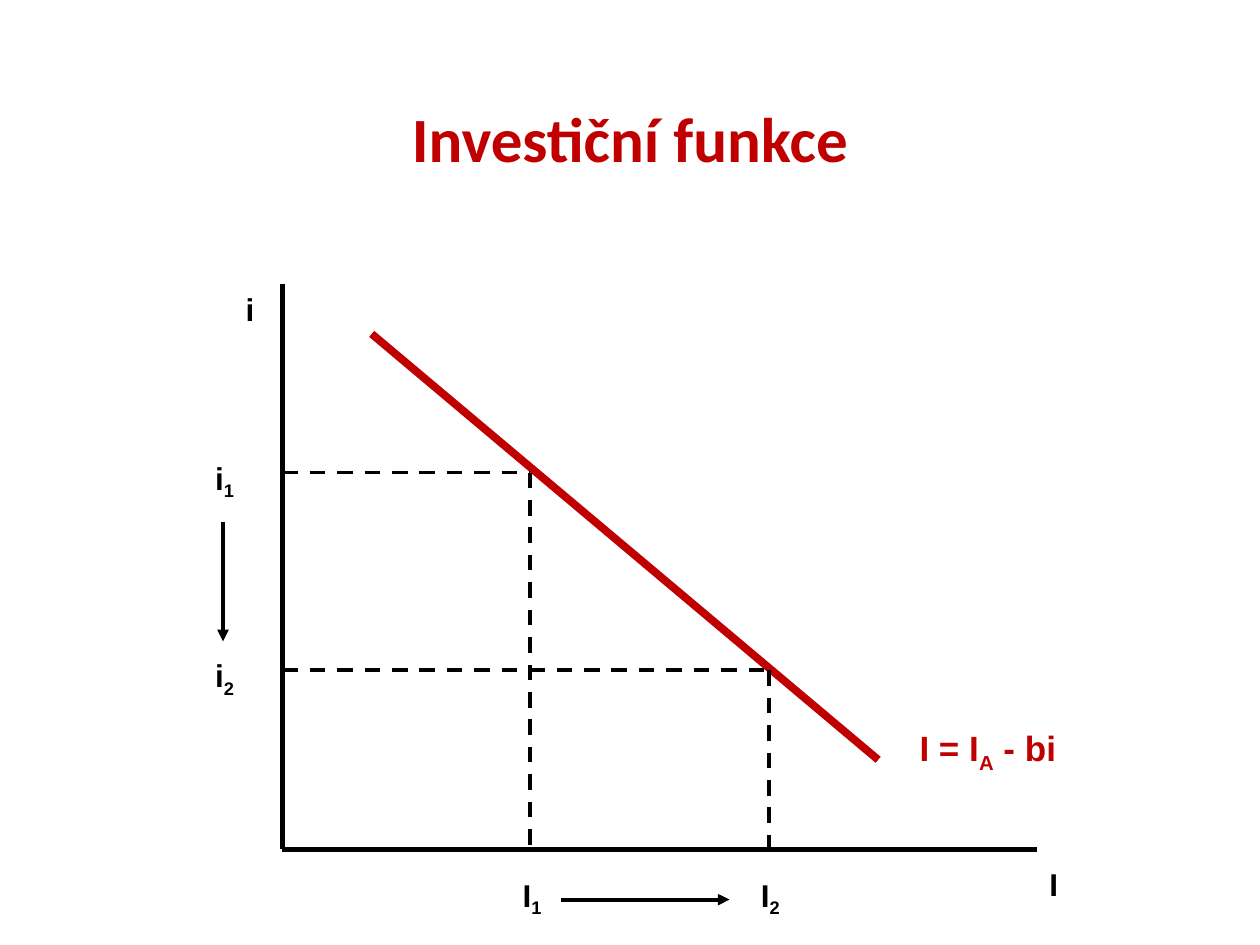
from dataclasses import dataclass

from lxml import etree
from pptx import Presentation
from pptx import util as u
from pptx.dml.color import RGBColor
from pptx.enum import dml, shapes, text
from pptx.oxml import ns


@dataclass(frozen=True)
class Theme:
    ink: RGBColor = RGBColor(0x00, 0x00, 0x00)
    accent: RGBColor = RGBColor(0xC0, 0x00, 0x00)
    title_font: str = "Calibri"
    label_font: str = "Arial"
    title_size: int = 36
    formula_size: int = 20
    label_size: int = 18
    axis_width: float = 3
    curve_width: float = 4.5
    guide_width: float = 2.25


THEME = Theme()


def add_run(paragraph, words, font_name, size, color, subscript=False):
    run = paragraph.add_run()
    run.text = words
    run.font.name = font_name
    run.font.size = u.Pt(size)
    run.font.bold = True
    run.font.color.rgb = color
    if subscript:
        run.font._element.set("baseline", "-25000")


def add_label(slide, left, top, width, height, base, subscript="", rest="",
              size=THEME.label_size, color=THEME.ink):
    """Text with an optional subscript and a continuation after it."""
    box = slide.shapes.add_textbox(*map(u.Inches, (left, top, width, height)))
    box.text_frame.word_wrap = True
    paragraph = box.text_frame.paragraphs[0]
    for words, lowered in ((base, False), (subscript, True), (rest, False)):
        if words:
            add_run(paragraph, words, THEME.label_font, size, color, lowered)


def add_line(slide, start, end, width, color=THEME.ink, dashed=False, arrow=False):
    connector = slide.shapes.add_connector(
        shapes.MSO_CONNECTOR.STRAIGHT, *map(u.Inches, (*start, *end)))
    connector.line.color.rgb = color
    connector.line.width = u.Pt(width)
    if dashed:
        connector.line.dash_style = dml.MSO_LINE.DASH
    if arrow:
        etree.SubElement(connector.line._get_or_add_ln(), ns.qn("a:tailEnd"),
                         type="triangle")
    etree.SubElement(connector._element.spPr, ns.qn("a:effectLst"))


def place_title(slide, left, top, width, height):
    title = slide.shapes.title
    title.left, title.top, title.width, title.height = map(
        u.Inches, (left, top, width, height))
    title.text_frame.vertical_anchor = text.MSO_ANCHOR.MIDDLE
    paragraph = title.text_frame.paragraphs[0]
    paragraph.alignment = text.PP_ALIGN.CENTER
    paragraph.line_spacing = 0.9
    add_run(paragraph, "Investiční funkce", THEME.title_font,
            THEME.title_size, THEME.accent)


def draw_investment_graph(slide, left, top, width, height):
    """Draw the graph; the box spans the two axes."""
    right, bottom = left + width, top + height

    # Axes and their names
    add_line(slide, (left, top), (left, bottom), THEME.axis_width)
    add_line(slide, (left, bottom), (right, bottom), THEME.axis_width)
    add_label(slide, right, bottom + 0.08, 0.87, 0.4, "I")
    add_label(slide, left - 0.39, top, 0.31, 0.4, "i")

    # Investment curve and its formula
    add_line(slide, (left + 0.71, top + 0.4), (left + 4.73, top + 3.78),
             THEME.curve_width, THEME.accent)
    add_label(slide, left + 4.96, top + 3.47, 1.57, 0.43, "I = I", "A", " - bi",
              THEME.formula_size, THEME.accent)

    # Dashed guides from both axes to the points on the curve
    points = [(left + 1.97, top + 1.5), (left + 3.86, top + 3.07)]
    for number, (x, y) in enumerate(points, 1):
        add_line(slide, (left, y), (x, y), THEME.guide_width, dashed=True)
        add_line(slide, (x, y), (x, bottom), THEME.guide_width, dashed=True)
        add_label(slide, left - 0.63, y - 0.16, 0.39, 0.4, "i", str(number))
        add_label(slide, x - 0.16, bottom + 0.16, 0.39, 0.4, "I", str(number))

    # Arrows showing the move from the first point to the second
    (first_x, first_y), (second_x, second_y) = points
    arrow_x, arrow_y = left - 0.47, bottom + 0.4
    add_line(slide, (arrow_x, first_y + 0.39), (arrow_x, second_y - 0.23),
             THEME.guide_width, arrow=True)
    add_line(slide, (first_x + 0.24, arrow_y), (second_x - 0.31, arrow_y),
             THEME.guide_width, arrow=True)


def main():
    presentation = Presentation()
    presentation.slide_width = u.Inches(10)
    presentation.slide_height = u.Inches(7.5)
    title_only = presentation.slide_layouts[5]
    slide = presentation.slides.add_slide(title_only)
    place_title(slide, 0.69, 0.4, 8.62, 1.45)
    draw_investment_graph(slide, 2.24, 2.25, 5.99, 4.49)
    presentation.save("out.pptx")


if __name__ == "__main__":
    main()
